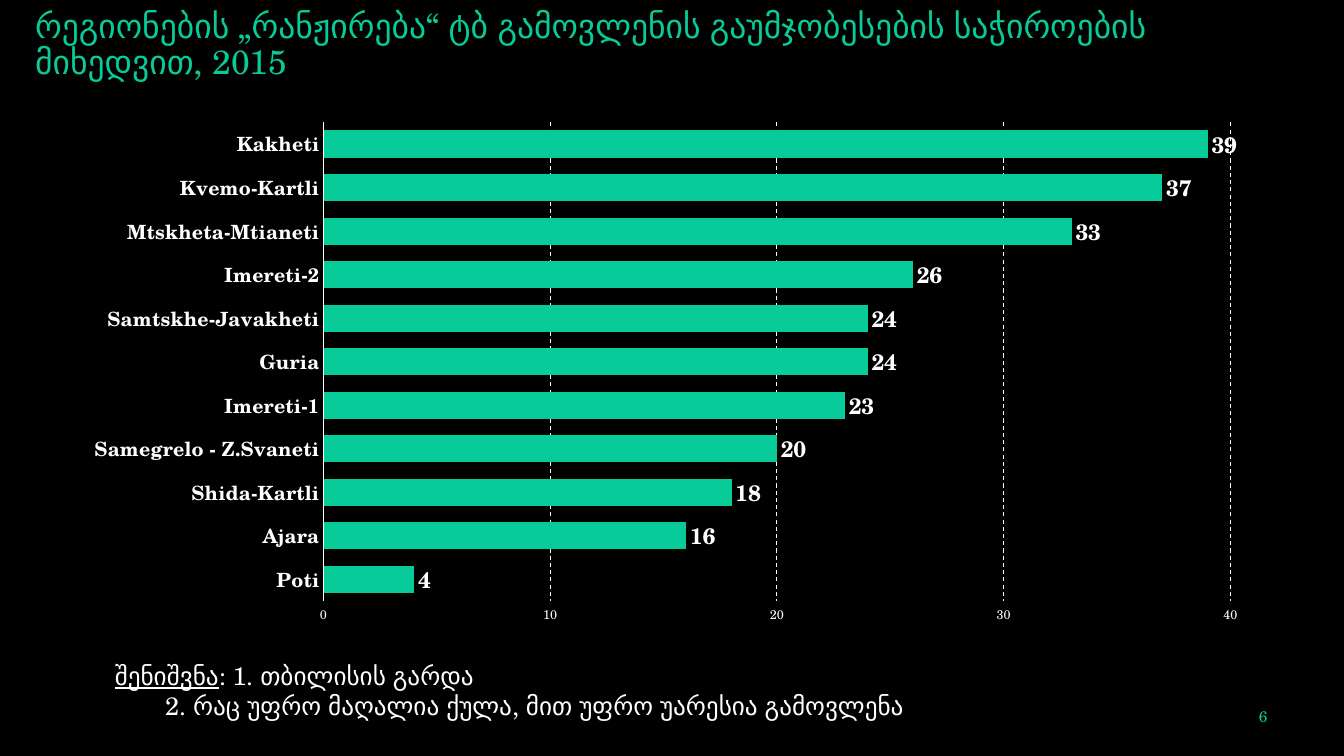
from dataclasses import dataclass

from lxml import etree
from pptx import Presentation
from pptx.chart.data import CategoryChartData
from pptx.dml.color import RGBColor
from pptx.enum.chart import XL_CHART_TYPE, XL_LABEL_POSITION, XL_TICK_MARK
from pptx.enum.dml import MSO_LINE
from pptx.enum.text import MSO_ANCHOR, MSO_AUTO_SIZE, PP_ALIGN
from pptx.oxml import parse_xml
from pptx.oxml.ns import nsdecls, qn
from pptx.util import Emu, Pt

BAR_CLUSTERED = XL_CHART_TYPE.BAR_CLUSTERED
OUTSIDE_END = XL_LABEL_POSITION.OUTSIDE_END
NO_TICK = XL_TICK_MARK.NONE
DASH = MSO_LINE.DASH
TOP, MIDDLE, BOTTOM = MSO_ANCHOR.TOP, MSO_ANCHOR.MIDDLE, MSO_ANCHOR.BOTTOM
GROW = MSO_AUTO_SIZE.SHAPE_TO_FIT_TEXT
LEFT, RIGHT = PP_ALIGN.LEFT, PP_ALIGN.RIGHT

EMU_PER_PX = 9144
SLIDE_SIZE = (1333, 750)
TITLE_BOX = (25, 22, 1290, 64)
CHART_BOX = (62, 104, 1204, 529)
NOTES_BOX = (104, 650, 820, 71)
NUMBER_BOX = (1176, 698, 91, 25)
PLOT_LAYOUT = {"x": 0.215, "y": 0.033, "w": 0.747, "h": 0.898}

TITLE = "რეგიონების „რანჟირება“ ტბ გამოვლენის გაუმჯობესების საჭიროების მიხედვით, 2015"
NOTES = [
    [("შენიშვნა", True), (": 1. თბილისის გარდა", False)],
    [("\t2. რაც უფრო მაღალია ქულა, მით უფრო უარესია გამოვლენა", False)],
]
REGION_SCORES = {
    "Poti": 4,
    "Ajara": 16,
    "Shida-Kartli": 18,
    "Samegrelo - Z.Svaneti": 20,
    "Imereti-1": 23,
    "Guria": 24,
    "Samtskhe-Javakheti": 24,
    "Imereti-2": 26,
    "Mtskheta-Mtianeti": 33,
    "Kvemo-Kartli": 37,
    "Kakheti": 39,
}


@dataclass(frozen=True)
class Theme:
    """Colours, font and type sizes of the slide."""

    background: RGBColor = RGBColor(0, 0, 0)
    text: RGBColor = RGBColor(255, 255, 255)
    accent: RGBColor = RGBColor(0x07, 0xCB, 0x98)
    font: str = "TeX Gyre Schola"
    title: int = 24
    notes: int = 18
    number: int = 11
    chart: int = 10
    category: int = 14
    scale: int = 9
    value: int = 16
    line: float = 0.75


THEME = Theme()


def px(length):
    """Turn a length in px into EMU."""
    return Emu(length * EMU_PER_PX)


def style_font(font, size, color, bold=False):
    """Set the theme font with a size, colour and weight."""
    font.name = THEME.font
    font.size = Pt(size)
    font.color.rgb = color
    font.bold = bold


def style_line(line):
    """Draw a thin line in the text colour."""
    line.color.rgb = THEME.text
    line.width = Pt(THEME.line)


def add_text(slide, box, paragraphs, size, color, anchor=TOP, align=LEFT, spacing=None):
    """Add a wrapping text box from lists of (text, underlined) runs."""
    shape = slide.shapes.add_textbox(*map(px, box))
    frame = shape.text_frame
    frame.word_wrap = True
    frame.vertical_anchor = anchor
    for index, runs in enumerate(paragraphs):
        paragraph = frame.add_paragraph() if index else frame.paragraphs[0]
        paragraph.alignment = align
        paragraph.line_spacing = spacing
        for text, underlined in runs:
            run = paragraph.add_run()
            run.text = text
            style_font(run.font, size, color)
            run.font.underline = underlined
    return shape


def add_title(slide, box):
    """Add the slide title, resting on the bottom of its box."""
    add_text(slide, box, [[(TITLE, False)]], THEME.title, THEME.accent, BOTTOM, spacing=0.9)


def add_notes(slide, box):
    """Add the remarks below the chart."""
    shape = add_text(slide, box, NOTES, THEME.notes, THEME.text)
    shape.text_frame.auto_size = GROW


def add_number(slide, box):
    """Add the slide number."""
    add_text(slide, box, [[("6", False)]], THEME.number, THEME.accent, MIDDLE, RIGHT)


def style_axes(chart):
    """Format the region axis and the score axis."""
    regions, scores = chart.category_axis, chart.value_axis
    for axis in (regions, scores):
        axis.major_tick_mark = axis.minor_tick_mark = NO_TICK
    style_font(regions.tick_labels.font, THEME.category, THEME.text, bold=True)
    style_line(regions.format.line)
    regions.has_major_gridlines = False
    style_font(scores.tick_labels.font, THEME.scale, THEME.text)
    scores.tick_labels.number_format = "0"
    scores.tick_labels.number_format_is_linked = False
    scores.minimum_scale, scores.maximum_scale, scores.major_unit = 0, 40, 10
    scores.format.line.fill.background()
    scores.has_major_gridlines = True
    style_line(scores.major_gridlines.format.line)
    scores.major_gridlines.format.line.dash_style = DASH


def style_bars(plot):
    """Format the bars and their value labels."""
    plot.gap_width = 60
    plot.vary_by_categories = False
    fill = plot.series[0].format.fill
    fill.solid()
    fill.fore_color.rgb = THEME.accent
    labels = plot.series[0].data_labels
    labels.show_value = True
    labels.position = OUTSIDE_END
    labels.number_format = "0"
    labels.number_format_is_linked = False
    style_font(labels.font, THEME.value, THEME.text, bold=True)


def place_plot(chart):
    """Fix the inner plot area and leave the chart area unfilled."""
    space = chart.font and chart.plots[0]._element.getparent().getparent().getparent()
    plot_area = space.find(qn("c:chart")).find(qn("c:plotArea"))
    for layout in plot_area.findall(qn("c:layout")):
        plot_area.remove(layout)
    layout = etree.Element(qn("c:layout"))
    manual = etree.SubElement(layout, qn("c:manualLayout"))
    settings = {"layoutTarget": "inner", "xMode": "edge", "yMode": "edge", **PLOT_LAYOUT}
    for name, value in settings.items():
        etree.SubElement(manual, qn(f"c:{name}")).set("val", str(value))
    plot_area.insert(0, layout)
    area = parse_xml(
        f'<c:spPr {nsdecls("c", "a")}><a:noFill/><a:ln><a:noFill/></a:ln></c:spPr>'
    )
    space.find(qn("c:txPr")).addprevious(area)


def add_ranking_chart(slide, box):
    """Add the bar chart of scores by region."""
    data = CategoryChartData(number_format="0")
    data.categories = list(REGION_SCORES)
    data.add_series("Series 1", list(REGION_SCORES.values()))
    chart = slide.shapes.add_chart(BAR_CLUSTERED, *map(px, box), data).chart
    chart.has_legend = False
    chart.has_title = False
    style_font(chart.font, THEME.chart, THEME.text)
    style_axes(chart)
    style_bars(chart.plots[0])
    place_plot(chart)


def build_ranking_slide(presentation):
    """Build the slide that ranks the regions."""
    slide = presentation.slides.add_slide(presentation.slide_layouts[6])
    slide.background.fill.solid()
    slide.background.fill.fore_color.rgb = THEME.background
    add_title(slide, TITLE_BOX)
    add_ranking_chart(slide, CHART_BOX)
    add_notes(slide, NOTES_BOX)
    add_number(slide, NUMBER_BOX)


def main():
    """Create the presentation and save it."""
    presentation = Presentation()
    presentation.slide_width, presentation.slide_height = map(px, SLIDE_SIZE)
    build_ranking_slide(presentation)
    presentation.save("out.pptx")


if __name__ == "__main__":
    main()
